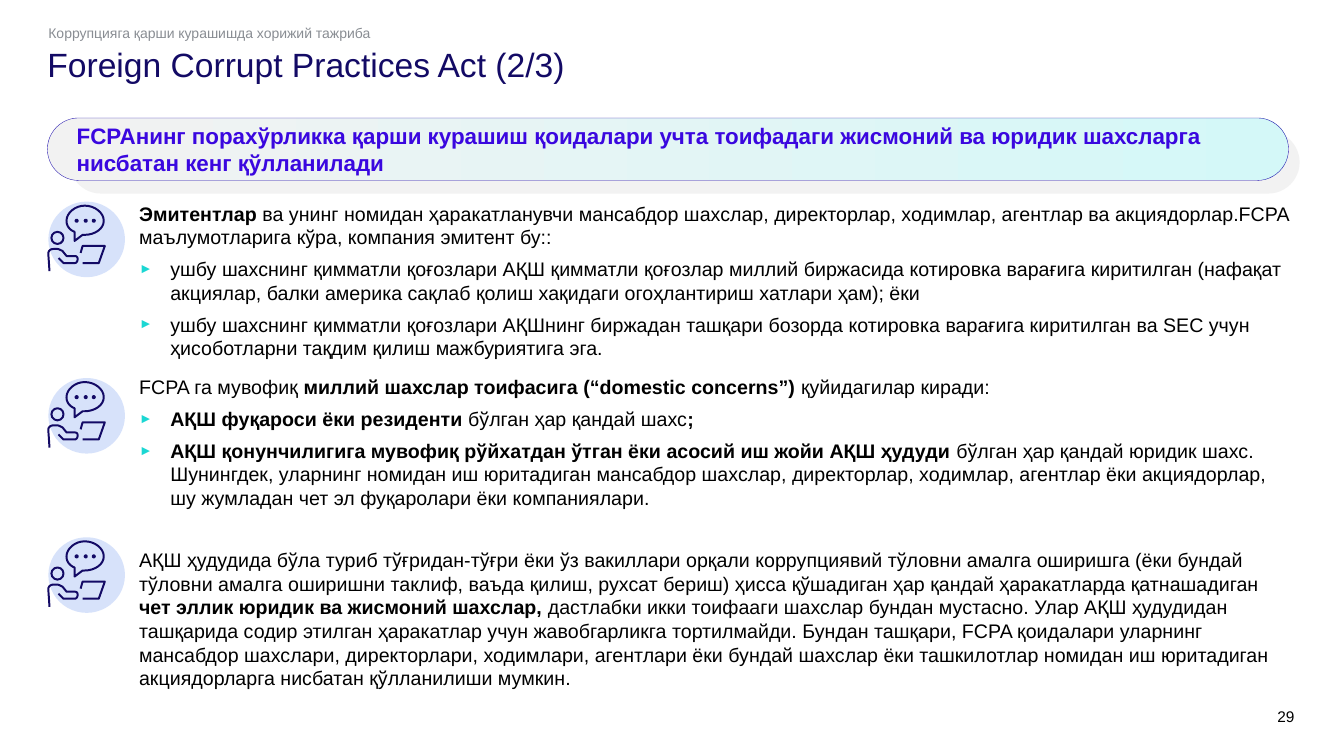
from lxml import etree
from pptx import Presentation
from pptx import util as u
from pptx.dml.color import RGBColor
from pptx.enum import shapes, text
from pptx.oxml import ns

PX = 9144
FONT = "Arial"
BLACK = RGBColor(0x00, 0x00, 0x00)
NAVY = RGBColor(0x13, 0x0A, 0x65)
GREY = RGBColor(0x89, 0x8D, 0x93)
VIOLET = RGBColor(0x3A, 0x07, 0xDF)
OUTLINE = RGBColor(0x21, 0x12, 0xAE)
PALE = RGBColor(0xF2, 0xF2, 0xF2)
MINT = RGBColor(0xD4, 0xF8, 0xF8)
DISC = RGBColor(0xB1, 0xC7, 0xF7)
TEAL = RGBColor(0x1B, 0xD7, 0xD3)

TITLE = "Foreign Corrupt Practices Act (2/3)"
TOPIC = "Коррупцияга қарши курашишда хорижий тажриба"
BANNER = ("FCPAнинг порахўрликка қарши курашиш қоидалари учта тоифадаги "
          "жисмоний ва юридик шахсларга нисбатан кенг қўлланилади")
PAGE = "29"

SECTIONS = [
    {"icon_top": 200, "box": (138, 200, 1147, 163), "paragraphs": [
        (False, [("Эмитентлар ", True),
                 ("ва унинг номидан ҳаракатланувчи мансабдор шахслар, директорлар, "
                  "ходимлар, агентлар ва акциядорлар.FCPA маълумотларига кўра, "
                  "компания эмитент бу::", False)]),
        (True, [("ушбу шахснинг қимматли қоғозлари АҚШ қимматли қоғозлар миллий "
                 "биржасида котировка варағига киритилган (нафақат акциялар, балки "
                 "америка сақлаб қолиш хақидаги огоҳлантириш хатлари ҳам); ёки", False)]),
        (True, [("ушбу шахснинг қимматли қоғозлари АҚШнинг биржадан ташқари бозорда "
                 "котировка варағига киритилган ва SEC учун ҳисоботларни тақдим қилиш "
                 "мажбуриятига эга.", False)]),
    ]},
    {"icon_top": 375, "box": (138, 372, 1147, 140), "paragraphs": [
        (False, [("FCPA га мувофиқ ", False),
                 ("миллий шахслар тоифасига (“domestic concerns”) ", True),
                 ("қуйидагилар киради:", False)]),
        (True, [("АҚШ фуқароси ёки резиденти ", True),
                ("бўлган ҳар қандай шахс", False), (";", True)]),
        (True, [("АҚШ қонунчилигига мувофиқ рўйхатдан ўтган ёки асосий иш жойи АҚШ ҳудуди ", True),
                ("бўлган ҳар қандай юридик шахс. Шунингдек, уларнинг номидан иш юритадиган "
                 "мансабдор шахслар, директорлар, ходимлар, агентлар ёки акциядорлар, шу "
                 "жумладан чет эл фуқаролари ёки компаниялари.", False)]),
    ]},
    {"icon_top": 533, "box": (138, 544, 1147, 146), "paragraphs": [
        (False, [("АҚШ ҳудудида бўла туриб тўғридан-тўғри ёки ўз вакиллари орқали "
                  "коррупциявий тўловни амалга оширишга (ёки бундай тўловни амалга "
                  "оширишни таклиф, ваъда қилиш, рухсат бериш) ҳисса қўшадиган ҳар "
                  "қандай ҳаракатларда қатнашадиган ", False),
                 ("чет эллик юридик ва жисмоний шахслар, ", True),
                 ("дастлабки икки тоифааги шахслар бундан мустасно. Улар АҚШ ҳудудидан "
                  "ташқарида содир этилган ҳаракатлар учун жавобгарликга тортилмайди. "
                  "Бундан ташқари, FCPA қоидалари уларнинг мансабдор шахслари, "
                  "директорлари, ходимлари, агентлари ёки бундай шахслар ёки ташкилотлар "
                  "номидан иш юритадиган акциядорларга нисбатан қўлланилиши мумкин.", False)]),
    ]},
]

DISC_BOX = (48, 0, 76, 75)
HEAD_AND_DOTS = [(51, 30, 12, 12), (75, 18, 2, 2), (84, 18, 2, 2), (92, 18, 2, 2)]
LAPTOP = [(80, 51), (82, 44), (104, 44), (98, 61), (82, 61)]
ARM = [(58, 56), (63, 61), (74, 61), (76, 61, 77, 59, 77, 57),
       (77, 55, 76, 54, 74, 54), (66, 54), (62, 49), (60, 48, 58, 47, 57, 47),
       (53, 47), (50, 47, 48, 49, 48, 51), (48, 55, 49, 65, 49, 69)]
BUBBLE = [(82, 33), (83, 33, 84, 33, 84, 33), (94, 33, 103, 27, 103, 19),
          (103, 11, 94, 4, 84, 4), (75, 4, 66, 11, 66, 19),
          (66, 24, 69, 28, 74, 30), (74, 39)]
OUTLINES = [(LAPTOP, False), (ARM, False), (BUBBLE, True)]
CURVE_STEPS = 8


def assign(obj, **values):
    for name, value in values.items():
        setattr(obj, name, value)


def place(sp, box):
    assign(sp, **dict(zip(("left", "top", "width", "height"), [v * PX for v in box])))


def frame(sp, insets=(0, 0, 0, 0), **values):
    tf = sp.text_frame
    names = ("margin_left", "margin_top", "margin_right", "margin_bottom")
    assign(tf, word_wrap=True, **dict(zip(names, [v * PX for v in insets])), **values)
    return tf


def add_run(p, content, size, color, bold=False):
    r = p.add_run()
    r.text = content
    assign(r.font, name=FONT, size=u.Pt(size), bold=bold)
    r.font.color.rgb = color


def set_bullet(p, char=None, indent=0):
    ppr = p._p.get_or_add_pPr()
    ppr.set("marL", str(indent * PX))
    ppr.set("indent", str(-indent * PX))
    if char is None:
        etree.SubElement(ppr, ns.qn("a:buNone"))
        return
    clr = etree.SubElement(ppr, ns.qn("a:buClr"))
    etree.SubElement(clr, ns.qn("a:srgbClr"), val=str(TEAL))
    etree.SubElement(ppr, ns.qn("a:buSzPct"), val="70000")
    etree.SubElement(ppr, ns.qn("a:buFont"), typeface=FONT)
    etree.SubElement(ppr, ns.qn("a:buChar"), char=char)


def add_preset(parent, kind, box):
    sp = parent.add_shape(kind, *[v * PX for v in box])
    sp.shadow.inherit = False
    return sp


def flatten(outline):
    points = [outline[0]]
    for step in outline[1:]:
        if len(step) == 2:
            points.append(step)
            continue
        x0, y0 = points[-1]
        x1, y1, x2, y2, x3, y3 = step
        for i in range(1, CURVE_STEPS + 1):
            t = i / CURVE_STEPS
            a, b, c, d = (1 - t) ** 3, 3 * t * (1 - t) ** 2, 3 * t * t * (1 - t), t ** 3
            points.append((a * x0 + b * x1 + c * x2 + d * x3,
                           a * y0 + b * y1 + c * y2 + d * y3))
    return points


def add_icon(slide, top):
    left, dy, width, height = DISC_BOX
    group = slide.shapes.add_group_shape().shapes
    disc = add_preset(group, shapes.MSO_SHAPE.OVAL, (left, top + dy, width, height))
    disc.fill.solid()
    disc.fill.fore_color.rgb = DISC
    disc.line.fill.background()
    color = disc._element.spPr.find(".//" + ns.qn("a:srgbClr"))
    etree.SubElement(color, ns.qn("a:alpha"), val="50000")
    strokes = [add_preset(group, shapes.MSO_SHAPE.OVAL, (x, top + y, w, h))
               for x, y, w, h in HEAD_AND_DOTS]
    for outline, closed in OUTLINES:
        points = [(round(x * PX), round((top + y) * PX)) for x, y in flatten(outline)]
        builder = group.build_freeform(*points[0])
        builder.add_line_segments(points[1:], close=closed)
        strokes.append(builder.convert_to_shape())
    for sp in strokes:
        sp.shadow.inherit = False
        sp.fill.background()
        sp.line.color.rgb = NAVY
        sp.line.width = u.Pt(1.42)


def add_banner(slide):
    kind = shapes.MSO_SHAPE.ROUNDED_RECTANGLE
    back = add_preset(slide.shapes, kind, (69, 130, 1220, 62))
    back.fill.solid()
    back.fill.fore_color.rgb = PALE
    back.line.fill.background()
    front = add_preset(slide.shapes, kind, (47, 117, 1231, 62))
    front.fill.gradient()
    front.fill.gradient_angle = 0
    for stop, position, color in zip(front.fill.gradient_stops, (0, 1), (PALE, MINT)):
        stop.position = position
        stop.color.rgb = color
    front.line.color.rgb = OUTLINE
    front.line.width = u.Pt(0.25)
    for sp in (back, front):
        sp.adjustments[0] = 0.5
    p = frame(front, (20, 5, 10, 5), vertical_anchor=text.MSO_ANCHOR.MIDDLE).paragraphs[0]
    p.alignment = text.PP_ALIGN.LEFT
    add_run(p, BANNER, 16, VIOLET, True)


def add_section(slide, section):
    sp = slide.shapes.add_textbox(*[v * PX for v in section["box"]])
    tf = frame(sp, (0, 0, 0, 5), auto_size=text.MSO_AUTO_SIZE.SHAPE_TO_FIT_TEXT)
    for i, (bulleted, runs) in enumerate(section["paragraphs"]):
        p = tf.add_paragraph() if i else tf.paragraphs[0]
        if bulleted:
            set_bullet(p, "►", 31)
        p.space_after = u.Pt(6)
        for content, bold in runs:
            add_run(p, content, 14, BLACK, bold)
    add_icon(slide, section["icon_top"])


def main():
    prs = Presentation()
    assign(prs, slide_width=1333 * PX, slide_height=750 * PX)
    slide = prs.slides.add_slide(prs.slide_layouts[1])
    title, topic = slide.placeholders
    for sp, box, content, size, color, spacing in (
            (title, (47, 48, 1238, 48), TITLE, 24, NAVY, 0.9),
            (topic, (48, 24, 1088, 17), TOPIC, 10, GREY, 1.0)):
        place(sp, box)
        p = frame(sp, vertical_anchor=text.MSO_ANCHOR.TOP,
                  auto_size=text.MSO_AUTO_SIZE.NONE).paragraphs[0]
        set_bullet(p)
        assign(p, alignment=text.PP_ALIGN.LEFT, line_spacing=spacing, space_before=u.Pt(0))
        add_run(p, content, size, color)
    add_banner(slide)
    for section in SECTIONS:
        add_section(slide, section)
    number = slide.shapes.add_textbox(*[v * PX for v in (1241, 702, 43, 16)])
    p = frame(number).paragraphs[0]
    p.alignment = text.PP_ALIGN.RIGHT
    add_run(p, PAGE, 11, BLACK)
    prs.save("out.pptx")


if __name__ == "__main__":
    main()
